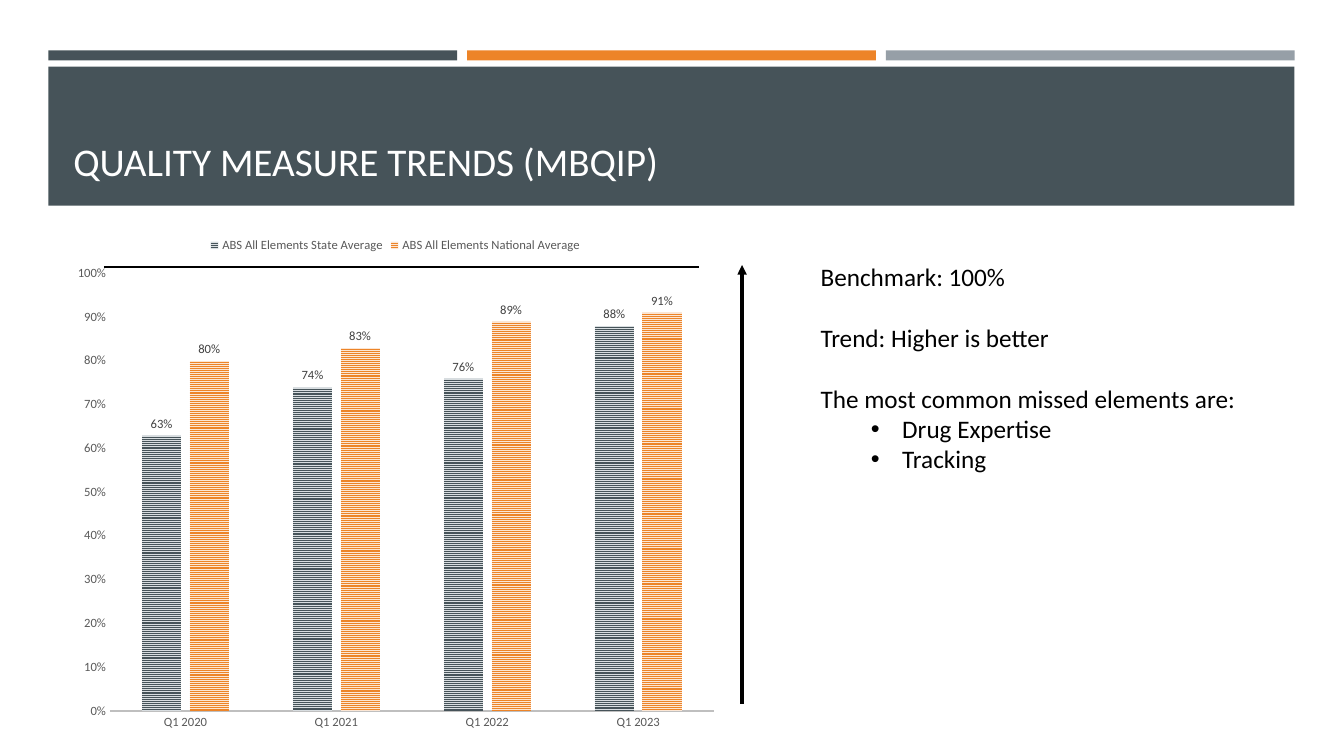
from lxml import etree
from pptx import Presentation
from pptx.chart.data import CategoryChartData
from pptx.dml.color import RGBColor
from pptx.enum.chart import XL_CHART_TYPE, XL_LABEL_POSITION, XL_LEGEND_POSITION, XL_TICK_MARK
from pptx.enum.dml import MSO_PATTERN
from pptx.enum.shapes import MSO_CONNECTOR, MSO_SHAPE
from pptx.enum.text import MSO_ANCHOR
from pptx.oxml import parse_xml
from pptx.oxml.ns import nsdecls, qn
from pptx.util import Inches, Pt

RECTANGLE = MSO_SHAPE.RECTANGLE
STRAIGHT = MSO_CONNECTOR.STRAIGHT
BOTTOM = MSO_ANCHOR.BOTTOM
COLUMNS = XL_CHART_TYPE.COLUMN_CLUSTERED
LEGEND_TOP = XL_LEGEND_POSITION.TOP
OUTSIDE_END = XL_LABEL_POSITION.OUTSIDE_END
NO_TICKS = XL_TICK_MARK.NONE
STRIPES = MSO_PATTERN.NARROW_HORIZONTAL

SLATE = RGBColor(0x46, 0x53, 0x59)
PALE_SLATE = RGBColor(0xD8, 0xDD, 0xE0)
ORANGE = RGBColor(0xED, 0x84, 0x28)
PALE_ORANGE = RGBColor(0xFB, 0xE6, 0xD4)
GRAY = RGBColor(0x96, 0x9F, 0xA7)
AXIS_TEXT = RGBColor(0x59, 0x59, 0x59)
AXIS_LINE = RGBColor(0xBF, 0xBF, 0xBF)
LABEL_TEXT = RGBColor(0x40, 0x40, 0x40)
BLACK = RGBColor(0, 0, 0)
WHITE = RGBColor(0xFF, 0xFF, 0xFF)

FONT = "Calibri"
PERCENT = "0%"
QUARTERS = ["Q1 2020", "Q1 2021", "Q1 2022", "Q1 2023"]
AVERAGES = [
    ("ABS All Elements State Average", (0.63, 0.74, 0.76, 0.88), SLATE, PALE_SLATE),
    ("ABS All Elements National Average", (0.8, 0.83, 0.89, 0.91), ORANGE, PALE_ORANGE),
]
PLOT_LAYOUT = {"x": 0.07, "y": 0.09, "w": 0.91, "h": 0.85}
NOTES = [
    ("Benchmark: 100%", 0, False),
    ("Trend: Higher is better", 22, False),
    ("The most common missed elements are:", 22, False),
    ("Drug Expertise", 0, True),
    ("Tracking", 0, True),
]


def style_font(font, size, color):
    """Apply the slide's typeface with a size and colour."""
    font.name = FONT
    font.size = Pt(size)
    font.color.rgb = color


def add_bar(slide, left, top, width, height, color):
    """Add a plain filled rectangle."""
    shape = slide.shapes.add_shape(
        RECTANGLE, Inches(left), Inches(top), Inches(width), Inches(height))
    shape.shadow.inherit = False
    shape.fill.solid()
    shape.fill.fore_color.rgb = color
    shape.line.fill.background()


def add_text_box(slide, left, top, width, height):
    """Add a wrapping text box and return its text frame."""
    box = slide.shapes.add_textbox(
        Inches(left), Inches(top), Inches(width), Inches(height))
    box.text_frame.word_wrap = True
    return box.text_frame


def add_line(slide, start, end, width, arrow=False):
    """Add a black straight line, optionally with an arrowhead at its end."""
    line = slide.shapes.add_connector(STRAIGHT, *map(Inches, start + end))
    line.line.color.rgb = BLACK
    line.line.width = Pt(width)
    properties = line.element.spPr
    etree.SubElement(properties, qn("a:effectLst"))
    if arrow:
        etree.SubElement(properties.find(qn("a:ln")), qn("a:tailEnd"), type="triangle")


def add_header(slide, left, top, width):
    """Draw the three accent strips and the title band."""
    gap = 0.1
    strip_width = (width - 2 * gap) / 3
    for index, color in enumerate((SLATE, ORANGE, GRAY)):
        add_bar(slide, left + index * (strip_width + gap), top, strip_width, 0.1, color)
    add_bar(slide, left, top + 0.16, width, 1.38, SLATE)
    frame = add_text_box(slide, left + 0.15, top + 0.3, width - 0.3, 1.08)
    frame.vertical_anchor = BOTTOM
    run = frame.paragraphs[0].add_run()
    run.text = "QUALITY MEASURE TRENDS (MBQIP)"
    style_font(run.font, 28, WHITE)


def set_plot_layout(chart):
    """Fix the inner plot area as fractions of the chart."""
    plot_area = chart.element.find(".//" + qn("c:plotArea"))
    for layout in plot_area.findall(qn("c:layout")):
        plot_area.remove(layout)
    edges = "".join(f'<c:{key} val="{value}"/>' for key, value in PLOT_LAYOUT.items())
    plot_area.insert(0, parse_xml(
        f'<c:layout {nsdecls("c")}><c:manualLayout><c:layoutTarget val="inner"/>'
        f'<c:xMode val="edge"/><c:yMode val="edge"/>{edges}</c:manualLayout></c:layout>'))


def style_axes(chart):
    """Format the quarter and percentage axes."""
    for axis in (chart.category_axis, chart.value_axis):
        axis.major_tick_mark = axis.minor_tick_mark = NO_TICKS
        axis.has_major_gridlines = False
        style_font(axis.tick_labels.font, 9, AXIS_TEXT)
    chart.category_axis.format.line.color.rgb = AXIS_LINE
    chart.category_axis.format.line.width = Pt(1.5)
    values = chart.value_axis
    values.format.line.fill.background()
    values.minimum_scale, values.maximum_scale, values.major_unit = 0, 1, 0.1
    values.tick_labels.number_format = PERCENT
    values.tick_labels.number_format_is_linked = False


def add_trend_chart(slide, left, top, width, height):
    """Draw the clustered columns, the benchmark line and the direction arrow."""
    data = CategoryChartData(number_format=PERCENT)
    data.categories = QUARTERS
    for name, values, _, _ in AVERAGES:
        data.add_series(name, values)
    chart = slide.shapes.add_chart(
        COLUMNS, Inches(left), Inches(top), Inches(width), Inches(height), data).chart
    style_font(chart.font, 10, BLACK)
    chart.has_title = False
    chart.has_legend = True
    chart.legend.position = LEGEND_TOP
    chart.legend.include_in_layout = False
    style_font(chart.legend.font, 9, AXIS_TEXT)
    style_axes(chart)
    set_plot_layout(chart)

    plot = chart.plots[0]
    plot.vary_by_categories = False
    plot.gap_width = 164
    plot.overlap = -22
    for series, (_, _, color, pale) in zip(plot.series, AVERAGES):
        fill = series.format.fill
        fill.patterned()
        fill.pattern = STRIPES
        fill.fore_color.rgb = color
        fill.back_color.rgb = pale
        labels = series.data_labels
        labels.show_value = True
        labels.position = OUTSIDE_END
        labels.number_format = PERCENT
        labels.number_format_is_linked = False
        style_font(labels.font, 9, LABEL_TEXT)

    add_line(slide, (left + 0.4, top + 0.4), (left + 6.3, top + 0.4), 1.5)
    arrow_x = left + width + 0.15
    add_line(slide, (arrow_x, top + 4.73), (arrow_x, top + 0.38), 2.25, arrow=True)


def add_notes_panel(slide, left, top, width, height):
    """Write the benchmark, the trend and the missed elements."""
    frame = add_text_box(slide, left, top, width, height)
    for index, (text, space, bulleted) in enumerate(NOTES):
        paragraph = frame.add_paragraph() if index else frame.paragraphs[0]
        paragraph.space_before = Pt(space)
        if bulleted:
            paragraph.level = 1
            properties = paragraph._p.get_or_add_pPr()
            properties.set("marL", str(Inches(0.81)))
            properties.set("indent", str(Inches(-0.31)))
            etree.SubElement(properties, qn("a:buFont"), typeface="Arial")
            etree.SubElement(properties, qn("a:buChar"), char="•")
        run = paragraph.add_run()
        run.text = text
        style_font(run.font, 18, BLACK)


def main():
    """Build and save the slide."""
    presentation = Presentation()
    presentation.slide_width = Inches(13.33)
    presentation.slide_height = Inches(7.5)
    slide = presentation.slides.add_slide(presentation.slide_layouts[6])
    add_header(slide, 0.48, 0.5, 12.36)
    add_trend_chart(slide, 0.63, 2.25, 6.58, 5.11)
    add_notes_panel(slide, 8.04, 2.54, 4.81, 2.83)
    presentation.save("out.pptx")


if __name__ == "__main__":
    main()
